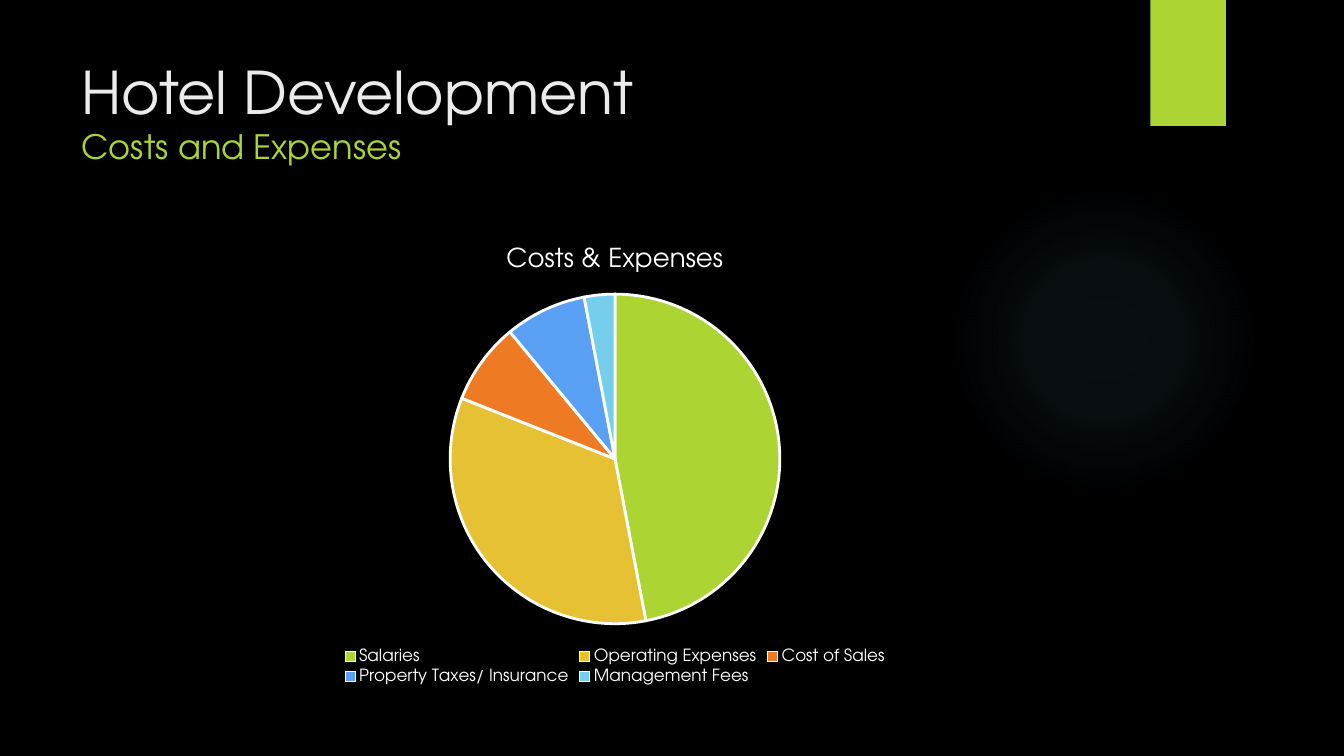
from dataclasses import dataclass

from lxml import etree
from pptx import Presentation
from pptx.chart.data import CategoryChartData
from pptx.dml.color import RGBColor
from pptx.enum.chart import XL_CHART_TYPE, XL_LEGEND_POSITION
from pptx.enum.shapes import MSO_SHAPE
from pptx.enum.text import MSO_ANCHOR, PP_ALIGN
from pptx.oxml.ns import qn
from pptx.util import Inches, Pt

PIE = XL_CHART_TYPE.PIE
LEGEND_BOTTOM = XL_LEGEND_POSITION.BOTTOM
ELLIPSE = MSO_SHAPE.OVAL
RECTANGLE = MSO_SHAPE.RECTANGLE
TOP = MSO_ANCHOR.TOP
LEFT = PP_ALIGN.LEFT

FONT = "TeX Gyre Adventor"
COLORS = {
    "background": "000000",
    "white": "FFFFFF",
    "title": "EBEBEB",
    "glow": "7AC4F0",
    "green": "ACD433",
    "yellow": "E6C133",
    "orange": "EF7A24",
    "blue": "5AA0F5",
    "sky": "75CEEC",
}


@dataclass
class Box:
    left: float
    top: float
    width: float
    height: float

    def lengths(self):
        return [Inches(value) for value in (self.left, self.top, self.width, self.height)]


@dataclass
class Expense:
    name: str
    percent: int
    color: str


@dataclass
class GlowStop:
    position: int
    opacity: int


CHART_TITLE = "Costs & Expenses"
EXPENSES = [
    Expense("Salaries", 47, "green"),
    Expense("Operating Expenses", 34, "yellow"),
    Expense("Cost of Sales", 8, "orange"),
    Expense("Property Taxes/ Insurance", 8, "blue"),
    Expense("Management Fees", 3, "sky"),
]
GLOW_STOPS = [GlowStop(0, 7), GlowStop(36, 6), GlowStop(69, 0)]


def rgb(name: str) -> RGBColor:
    return RGBColor.from_string(COLORS[name])


def set_font(font, size: float, color: str) -> None:
    font.name = FONT
    font.size = Pt(size)
    font.bold = False
    font.color.rgb = rgb(color)


def add_plain_shape(slide, kind, box: Box, color: str):
    shape = slide.shapes.add_shape(kind, *box.lengths())
    shape.shadow.inherit = False
    shape.line.fill.background()
    shape.fill.solid()
    shape.fill.fore_color.rgb = rgb(color)
    return shape


def add_glow(slide, box: Box) -> None:
    shape = add_plain_shape(slide, ELLIPSE, box, "glow")
    solid = shape.element.spPr.find(qn("a:solidFill"))
    gradient = etree.Element(qn("a:gradFill"), rotWithShape="1")
    stops = etree.SubElement(gradient, qn("a:gsLst"))
    for glow_stop in GLOW_STOPS:
        stop = etree.SubElement(stops, qn("a:gs"), pos=str(glow_stop.position * 1000))
        color = etree.SubElement(stop, qn("a:srgbClr"), val=COLORS["glow"])
        etree.SubElement(color, qn("a:alpha"), val=str(glow_stop.opacity * 1000))
    circle = etree.SubElement(gradient, qn("a:path"), path="circle")
    center = {side: "50000" for side in "ltrb"}
    etree.SubElement(circle, qn("a:fillToRect"), center)
    solid.getparent().replace(solid, gradient)


def format_title(slide, box: Box) -> None:
    title = slide.shapes.title
    title.left, title.top, title.width, title.height = box.lengths()
    frame = title.text_frame
    frame.word_wrap = True
    frame.vertical_anchor = TOP
    paragraph = frame.paragraphs[0]
    paragraph.alignment = LEFT
    heading = paragraph.add_run()
    heading.text = "Hotel Development"
    set_font(heading.font, 42, "title")
    paragraph.add_line_break()
    subheading = paragraph.add_run()
    subheading.text = "Costs and Expenses"
    set_font(subheading.font, 24, "green")


def add_expense_chart(slide, box: Box) -> None:
    data = CategoryChartData()
    data.categories = [expense.name for expense in EXPENSES]
    data.add_series(CHART_TITLE, [expense.percent for expense in EXPENSES])
    chart = slide.shapes.add_chart(PIE, *box.lengths(), data).chart
    set_font(chart.font, 10, "white")

    chart.has_title = True
    run = chart.chart_title.text_frame.paragraphs[0].add_run()
    run.text = CHART_TITLE
    set_font(run.font, 18.6, "white")
    chart.chart_title.include_in_layout = False

    chart.has_legend = True
    chart.legend.position = LEGEND_BOTTOM
    chart.legend.include_in_layout = False
    set_font(chart.legend.font, 12, "white")

    plot = chart.plots[0]
    plot.vary_by_categories = True
    for index, expense in enumerate(EXPENSES):
        slice_format = plot.series[0].points[index].format
        slice_format.fill.solid()
        slice_format.fill.fore_color.rgb = rgb(expense.color)
        slice_format.line.color.rgb = rgb("white")
        slice_format.line.width = Pt(2)


def main() -> None:
    presentation = Presentation()
    presentation.slide_width = Inches(13.33)
    presentation.slide_height = Inches(7.5)
    slide = presentation.slides.add_slide(presentation.slide_layouts.get_by_name("Title Only"))
    slide.background.fill.solid()
    slide.background.fill.fore_color.rgb = rgb("background")
    add_glow(slide, Box(9.41, 1.83, 3.08, 3.08))
    add_plain_shape(slide, RECTANGLE, Box(11.41, 0, 0.75, 1.25), "green")
    format_title(slide, Box(0.71, 0.5, 10.29, 1.53))
    add_expense_chart(slide, Box(1.21, 2.24, 9.78, 4.59))
    presentation.save("out.pptx")


if __name__ == "__main__":
    main()
